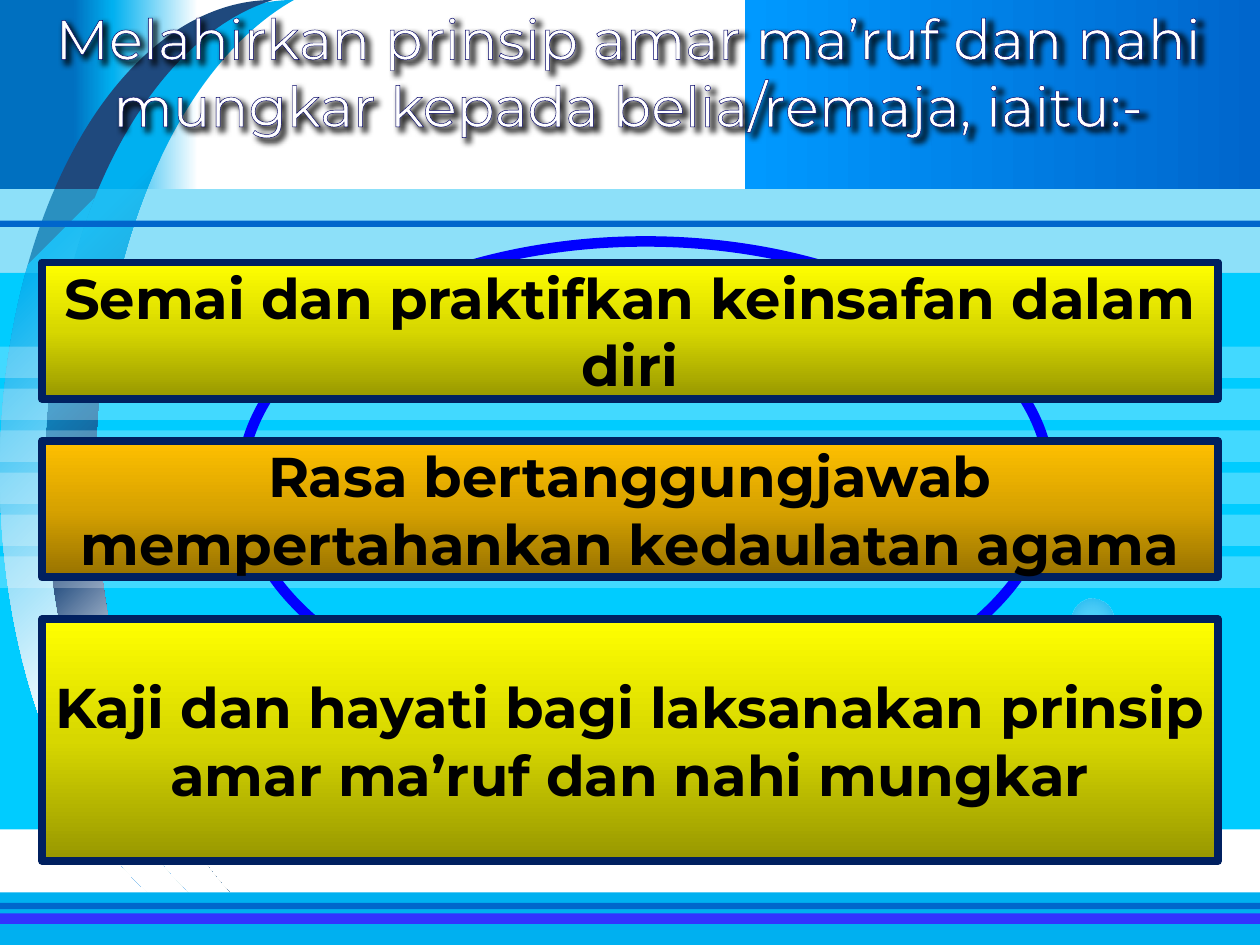
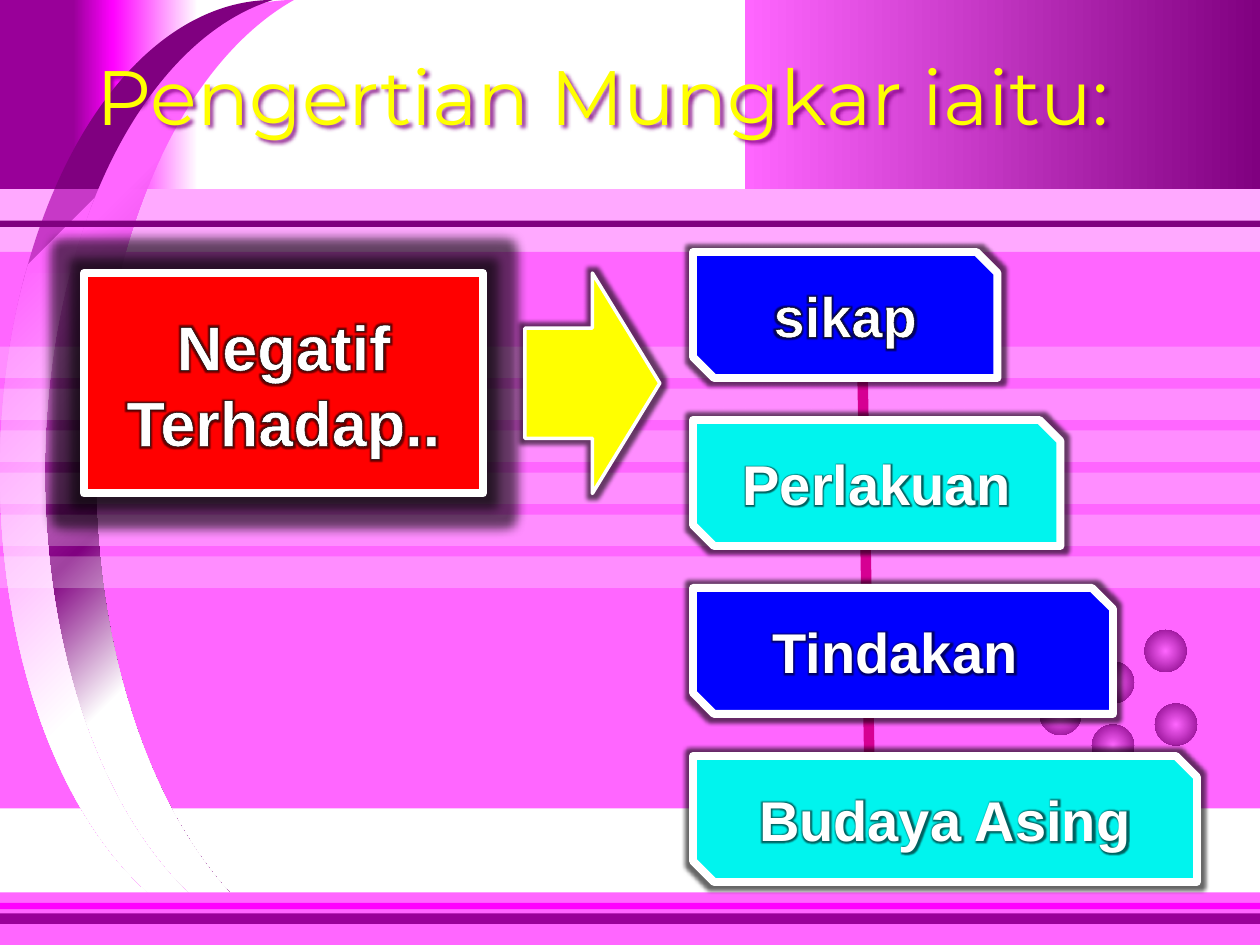
from pptx import Presentation
from pptx import util as u
from pptx.dml.color import RGBColor
from pptx.enum import shapes, text
from pptx.oxml import parse_xml
from pptx.oxml.ns import nsdecls, qn

# Grid of 120 columns by 90 rows; every box is (column, row, width, height)
COLS, ROWS = 120, 90
CELL = u.Inches(10) // COLS
PAGE = (0, 0, COLS, ROWS)
KIND = shapes.MSO_SHAPE

C = {"white": "FFFFFF", "black": "000000", "navy": "002060", "ink": "000066",
     "blue": "0000FF", "cyan": "00F4EE", "red": "FF0000", "yellow": "FFFF00",
     "magenta": "D60093", "cream": "FFFFCC"}
YELLOW_FADE = [(0, "979700"), (50, "D7D700"), (100, "FFFF00")]
AMBER_FADE = [(0, "977200"), (50, "D7A200"), (100, "FFC000")]

THEMES = {
    "blue": {"body": "00CCFF", "body_row": 26, "light": "00B0F0", "dark": "1F497D",
             "right": ("0099FF", "0066CC"), "left": ("0070C0", "00B0F0"),
             "veil": "34C8F6", "rule": "0066CC", "foot": ("0066CC", "3333FF"),
             "bubble": [(0, "C6D9F1", 34), (100, "00B0F0")]},
    "pink": {"body": "FF66FF", "body_row": 24, "light": "FF66FF", "dark": "800080",
             "right": ("FF66FF", "800080"), "left": ("990099", "FF00FF"),
             "veil": "FF66FF", "rule": "800080", "foot": ("FF00FF", "990099"),
             "bubble": [(0, "FF66FF"), (100, "800080")]},
}
BUBBLES = [(109, 60), (102, 57), (104, 63), (99, 66), (96, 60),
           (105, 76), (110, 67), (104, 69), (110, 73)]

TITLE = {"size": u.Pt(32), "name": "Montserrat"}
BIG_TITLE = {"size": u.Pt(44), "name": "Montserrat"}
BAR = {"size": u.Pt(32), "name": "Montserrat", "bold": True}
LABEL = {"size": u.Pt(32), "name": "Arial", "bold": True}
CAUSE = {"size": u.Pt(36), "name": "Arial", "bold": True}


# XML helpers
def a_xml(tag, inner, attrs=""):
    return parse_xml(f'<a:{tag} {nsdecls("a")} {attrs}>{inner}</a:{tag}>')


def color_xml(color, alpha=100):
    return f'<a:srgbClr val="{color}"><a:alpha val="{alpha * 1000}"/></a:srgbClr>'


def glow_xml(color, pts, alpha):
    return f'<a:glow rad="{u.Pt(pts)}">{color_xml(color, alpha)}</a:glow>'


def shadow_xml(color, pts, angle=45, alpha=80):
    return (f'<a:outerShdw blurRad="{u.Pt(pts)}" dist="{u.Pt(pts)}" '
            f'dir="{angle * 60000}" algn="tl" rotWithShape="0">'
            f'{color_xml(color, alpha)}</a:outerShdw>')


def add_effect(sp, effect):
    sp.shadow.inherit = False
    effects = sp._element.spPr.find(qn("a:effectLst"))
    for child in a_xml("effectLst", effect):
        effects.append(child)


def paint(sp, fill, alpha=100, angle=0, radial=False):
    """Fill with one colour, or with a list of gradient stops."""
    sp.fill.background()
    if fill is None:
        return
    if isinstance(fill, str):
        new = a_xml("solidFill", color_xml(fill, alpha))
    else:
        stops = "".join(f'<a:gs pos="{pos * 1000}">{color_xml(*color)}</a:gs>'
                        for pos, *color in fill)
        way = f'<a:lin ang="{angle * 60000}" scaled="0"/>'
        if radial:
            way = ('<a:path path="circle"><a:fillToRect l="50000" t="50000" '
                   'r="50000" b="50000"/></a:path>')
        new = a_xml("gradFill", f"<a:gsLst>{stops}</a:gsLst>{way}")
    spPr = sp._element.spPr
    spPr.replace(spPr.find(qn("a:noFill")), new)


# Placing helpers
def within(box, col, row, width, height):
    return box[0] + col, box[1] + row, width, height


def emu(box):
    return [round(v * CELL) for v in box]


def add_block(s, box, fill, kind=KIND.RECTANGLE, line=None, effect="", **paint_args):
    sp = s.shapes.add_shape(kind, *emu(box))
    paint(sp, fill, **paint_args)
    if line:
        color, width = line
        sp.line.color.rgb = RGBColor.from_string(color)
        sp.line.width = u.Pt(width)
    else:
        sp.line.fill.background()
    add_effect(sp, effect)
    return sp


def write(sp, words, style, color, align=text.PP_ALIGN.CENTER,
          anchor=text.MSO_ANCHOR.MIDDLE, outline=None, halo=""):
    tf = sp.text_frame
    tf.word_wrap = True
    tf.vertical_anchor = anchor
    p = tf.paragraphs[0]
    p.alignment = align
    r = p.add_run()
    r.text = words
    for name, value in style.items():
        setattr(r.font, name, value)
    r.font.color.rgb = RGBColor.from_string(color)
    rPr = r.font._element
    if halo:
        rPr.find(qn("a:solidFill")).addnext(a_xml("effectLst", halo))
    if outline:
        line_color, width = outline
        rPr.insert(0, a_xml("ln", f"<a:solidFill>{color_xml(line_color)}</a:solidFill>",
                            f'w="{u.Pt(width)}"'))


# Shared backdrop
def add_header(s, box, t):
    near, far = t["right"]
    add_block(s, within(box, 22, 0, 98, 18),
              [(50, C["white"]), (50, near), (100, far)])
    edge, middle = t["left"]
    add_block(s, within(box, 0, 0, 29, 18),
              [(24, edge), (37, middle), (65, C["white"])])


def add_crescents(s, box, t):
    light, dark = t["light"], t["dark"]
    for col, bulge, stops in (
            (2, 0.274, [(24, light), (50, dark), (65, C["white"])]),
            (0, 0.164, [(24, dark), (24, light), (65, C["white"])])):
        moon = add_block(s, within(box, col, 0, 26, 90), stops, KIND.MOON, angle=45)
        moon.adjustments[0] = bulge


def add_bands(s, box, t):
    add_block(s, within(box, 0, 18, COLS, 8), t["veil"], alpha=56)
    add_block(s, within(box, 0, 21, COLS, 0.6), t["rule"])
    for i in range(6):
        add_block(s, within(box, 0, 33 + 4 * i, COLS, 3), C["white"], alpha=26)


def add_footer(s, box, t):
    thin, thick = t["foot"]
    for row, height, color in ((0, 5, t["light"]), (1, 0.6, thin), (2, 1, thick)):
        add_block(s, within(box, 0, row, COLS, height), color)


def add_backdrop(s, box, t):
    add_block(s, within(box, 0, t["body_row"], COLS, 53), t["body"])
    add_header(s, box, t)
    add_crescents(s, box, t)
    add_bands(s, box, t)
    add_footer(s, within(box, 0, 85, COLS, 5), t)
    for col, row in BUBBLES:
        add_block(s, within(box, col, row, 4, 4), t["bubble"],
                  KIND.FLOWCHART_CONNECTOR, radial=True)


def add_title(s, box, words, style, color, effect, **write_args):
    sp = s.shapes.add_textbox(*emu(box))
    write(sp, words, style, color, anchor=text.MSO_ANCHOR.TOP, **write_args)
    add_effect(sp, effect)


# Slide 1: three principles over a ring
def add_principles(s, box):
    add_block(s, within(box, 19, -2, 77, 46), None, KIND.OVAL, line=(C["blue"], 6))
    bars = [("Semai dan praktifkan keinsafan dalam diri", 13, YELLOW_FADE),
            ("Rasa bertanggungjawab mempertahankan kedaulatan agama", 13, AMBER_FADE),
            ("Kaji dan hayati bagi laksanakan prinsip amar ma’ruf dan nahi mungkar",
             23, YELLOW_FADE)]
    for i, (words, height, fade) in enumerate(bars):
        bar = add_block(s, within(box, 0, 17 * i, box[2], height), fade,
                        line=(C["navy"], 4.5), angle=270)
        write(bar, words, BAR, C["black"], halo=shadow_xml(C["cream"], 3))


def principles_slide(s):
    add_backdrop(s, PAGE, THEMES["blue"])
    add_title(s, (-0.12, -0.24, COLS, 20.6),
              "Melahirkan prinsip amar ma’ruf dan nahi mungkar kepada belia/remaja, iaitu:-",
              TITLE, C["white"], shadow_xml(C["black"], 3), outline=(C["ink"], 0.75))
    add_principles(s, (4, 25, 112, 57))


# Slide 2: a cause pointing to a chain of four
def add_cause(s, box):
    outline = (C["black"], 0.75)
    card = add_block(s, within(box, 0, 0, 38, box[3]), C["red"],
                     line=(C["white"], 4.5), effect=glow_xml(C["black"], 12, 60))
    write(card, "Negatif Terhadap..", CAUSE, C["white"], outline=outline,
          halo=glow_xml(C["black"], 4, 60))
    add_block(s, within(box, 42, 0, 12.84, box[3]), C["yellow"], KIND.RIGHT_ARROW,
              line=(C["white"], 2), effect=glow_xml(C["black"], 5, 60))


def add_chain(s, box):
    start, end = emu(within(box, 17, 60, 0, 0)), emu(within(box, 16, 3, 0, 0))
    stem = s.shapes.add_connector(shapes.MSO_CONNECTOR.STRAIGHT, *start[:2], *end[:2])
    stem.line.color.rgb = RGBColor.from_string(C["magenta"])
    stem.line.width = u.Pt(6)
    stem.line._ln.append(a_xml("tailEnd", "", 'type="arrow"'))
    stem._element.spPr.append(a_xml("effectLst", ""))
    links = [("sikap", 29), ("Perlakuan", 35), ("Tindakan ", 40), ("Budaya Asing", 48)]
    for i, (words, width) in enumerate(links):
        link = add_block(s, within(box, 0, 16 * i, width, 12),
                         C["cyan"] if i % 2 else C["blue"],
                         KIND.SNIP_2_DIAG_RECTANGLE, line=(C["white"], 4.5),
                         effect=glow_xml(C["black"], 5, 60))
        write(link, words, LABEL, C["white"], halo=glow_xml(C["black"], 4, 60),
              outline=None if i else (C["black"], 0.75))


def meaning_slide(s):
    add_backdrop(s, PAGE, THEMES["pink"])
    add_title(s, (8, 4, 108, 10), "Pengertian Mungkar iaitu:", BIG_TITLE, C["yellow"],
              shadow_xml(THEMES["pink"]["dark"], 2), align=text.PP_ALIGN.LEFT,
              outline=(C["black"], 2.25))
    add_cause(s, (8, 26, 54.84, 21))
    add_chain(s, (66, 24, 48, 60))


def main():
    prs = Presentation()
    prs.slide_width, prs.slide_height = COLS * CELL, ROWS * CELL
    for build in (principles_slide, meaning_slide):
        build(prs.slides.add_slide(prs.slide_layouts[6]))
    prs.save("out.pptx")


if __name__ == "__main__":
    main()
